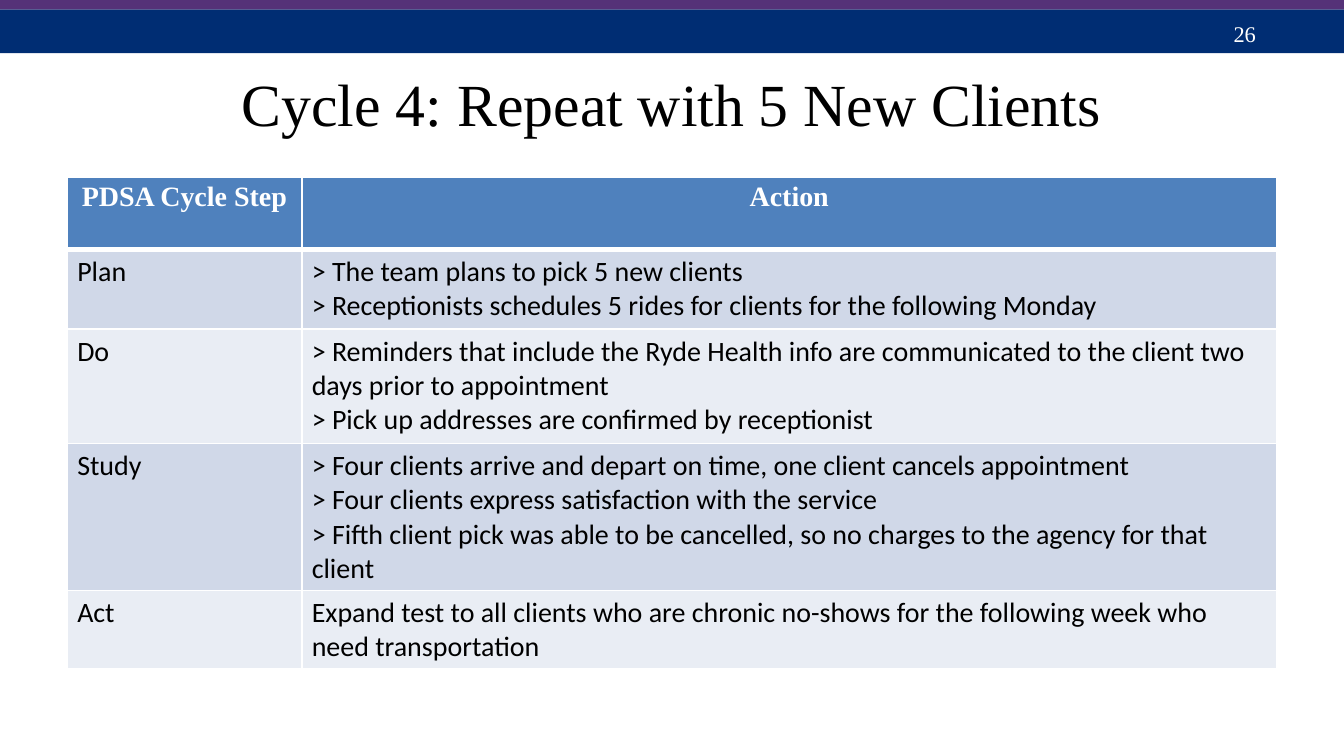
"""Build the PDSA cycle 4 slide with its step and action table."""
from dataclasses import dataclass

from lxml import etree
from pptx import Presentation
from pptx import util as u
from pptx.dml.color import RGBColor
from pptx.enum import shapes, text
from pptx.oxml import ns

PX = 4572


@dataclass(frozen=True)
class Theme:
    navy: str = "002D73"
    purple: str = "553278"
    header: str = "4F81BD"
    bands: tuple[str, str] = ("D0D8E8", "E9EDF4")
    white: str = "FFFFFF"
    black: str = "000000"
    serif: str = "Times New Roman"
    sans: str = "Calibri"
    title_pt: int = 32
    table_pt: int = 15
    number_pt: int = 12
    rule_pt: int = 1
    header_rule_pt: int = 3


@dataclass(frozen=True)
class Box:
    x: int
    y: int
    w: int
    h: int

    def emu(self) -> list[int]:
        return [v * PX for v in (self.x, self.y, self.w, self.h)]


@dataclass(frozen=True)
class Bar:
    box: Box
    color: str


@dataclass(frozen=True)
class Step:
    name: str
    actions: tuple[str, ...]
    height: int


THEME = Theme()
NAVY_BAR = Bar(Box(0, 14, 2000, 65), THEME.navy)
PURPLE_BAR = Bar(Box(0, -4, 2000, 18), THEME.purple)
COLUMNS = (349, 1451)
HEADER = Step("PDSA Cycle Step", ("Action",), 108)
STEPS = (
    Step("Plan", (
        "> The team plans to pick 5 new clients",
        "> Receptionists schedules 5 rides for clients for the following Monday",
    ), 119),
    Step("Do", (
        "> Reminders that include the Ryde Health info are communicated to the client two days prior to appointment",
        "> Pick up addresses are confirmed by receptionist",
    ), 170),
    Step("Study", (
        "> Four clients arrive and depart on time, one client cancels appointment",
        "> Four clients express satisfaction with the service",
        "> Fifth client pick was able to be cancelled, so no charges to the agency for that client",
    ), 219),
    Step("Act", (
        "Expand test to all clients who are chronic no-shows for the following week who need transportation",
    ), 115),
)


def write(tf, lines, size: int, face: str, color: str, bold: bool = False, align=None) -> None:
    """Fill a text frame with one evenly formatted paragraph per line."""
    tf.text = "\n".join(lines)
    for p in tf.paragraphs:
        p.alignment = align
        p.font.size = u.Pt(size)
        p.font.name = face
        p.font.bold = bold
        p.font.color.rgb = RGBColor.from_string(color)


def add_bar(slide, bar: Bar) -> None:
    """Draw a plain coloured band."""
    sp = slide.shapes.add_shape(shapes.MSO_SHAPE.RECTANGLE, *bar.box.emu())
    sp.shadow.inherit = False
    sp.fill.solid()
    sp.fill.fore_color.rgb = RGBColor.from_string(bar.color)
    sp.line.fill.background()


def add_number(slide, number: str, box: Box) -> None:
    """Write the page number on the band."""
    tf = slide.shapes.add_textbox(*box.emu()).text_frame
    tf.word_wrap = True
    tf.vertical_anchor = text.MSO_ANCHOR.MIDDLE
    write(tf, [number], THEME.number_pt, THEME.serif, THEME.white)


def set_title(slide, title: str, box: Box) -> None:
    """Place and format the title placeholder."""
    sp = slide.shapes.title
    sp.left, sp.top, sp.width, sp.height = box.emu()
    sp.text_frame.vertical_anchor = text.MSO_ANCHOR.MIDDLE
    write(sp.text_frame, [title], THEME.title_pt, THEME.serif, THEME.black,
          align=text.PP_ALIGN.CENTER)


def set_borders(cell, widths: dict[str, int]) -> None:
    """Rule the given sides of a cell in white, listed in L, R, T, B order."""
    props = cell._tc.get_or_add_tcPr()
    for index, (side, width) in enumerate(widths.items()):
        line = etree.Element(ns.qn(f"a:ln{side}"), w=str(u.Pt(width)))
        fill = etree.SubElement(line, ns.qn("a:solidFill"))
        etree.SubElement(fill, ns.qn("a:srgbClr"), val=THEME.white)
        props.insert(index, line)


def fill_row(table, index: int, step: Step) -> None:
    """Set the height, fills, rules and wording of one table row."""
    is_header = index == 0
    fill = THEME.header if is_header else THEME.bands[(index - 1) % 2]
    face = THEME.serif if is_header else THEME.sans
    color = THEME.white if is_header else THEME.black
    align = text.PP_ALIGN.CENTER if is_header else text.PP_ALIGN.LEFT
    top = THEME.header_rule_pt if index == 1 else THEME.rule_pt
    bottom = THEME.header_rule_pt if is_header else THEME.rule_pt
    table.rows[index].height = step.height * PX
    for cell, lines in zip(table.rows[index].cells, ((step.name,), step.actions)):
        cell.fill.solid()
        cell.fill.fore_color.rgb = RGBColor.from_string(fill)
        cell.margin_left = cell.margin_right = 15 * PX
        cell.margin_top = cell.margin_bottom = 8 * PX
        set_borders(cell, {"L": THEME.rule_pt, "R": THEME.rule_pt, "T": top, "B": bottom})
        write(cell.text_frame, lines, THEME.table_pt, face, color, is_header, align)


def add_steps(slide, x: int, y: int) -> None:
    """Build the table of cycle steps."""
    rows = (HEADER, *STEPS)
    box = Box(x, y, sum(COLUMNS), sum(step.height for step in rows))
    table = slide.shapes.add_table(len(rows), len(COLUMNS), *box.emu()).table
    for column, width in zip(table.columns, COLUMNS):
        column.width = width * PX
    for index, step in enumerate(rows):
        fill_row(table, index, step)


def main() -> None:
    """Assemble and save the slide."""
    prs = Presentation()
    prs.slide_width, prs.slide_height = 2000 * PX, 1125 * PX
    slide = prs.slides.add_slide(prs.slide_layouts.get_by_name("Title Only"))
    add_bar(slide, NAVY_BAR)
    add_number(slide, "26", Box(1816, 20, 150, 60))
    add_bar(slide, PURPLE_BAR)
    set_title(slide, "Cycle 4: Repeat with 5 New Clients", Box(100, 59, 1800, 188))
    add_steps(slide, 100, 263)
    prs.save("out.pptx")


if __name__ == "__main__":
    main()
